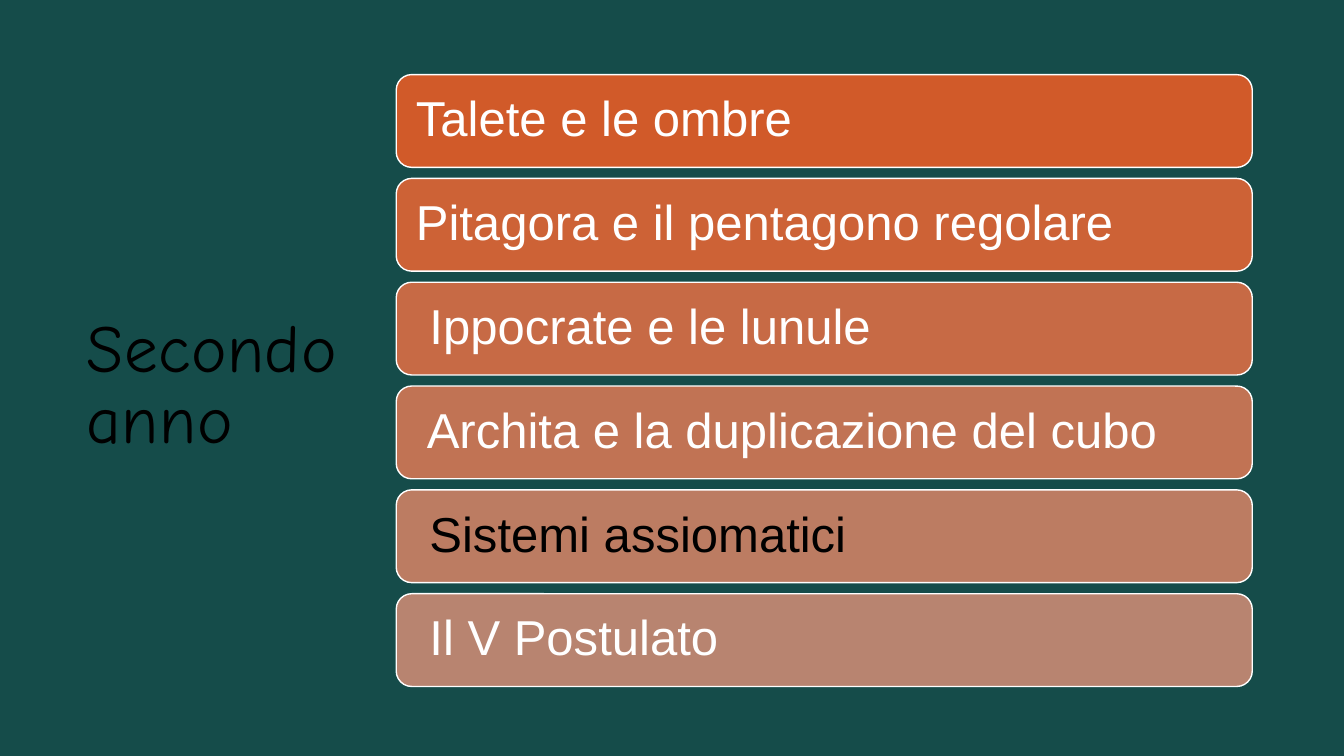
from pptx import Presentation
from pptx.dml.color import RGBColor
from pptx.enum.shapes import MSO_SHAPE
from pptx.enum.text import MSO_ANCHOR, PP_ALIGN
from pptx.util import Inches, Pt

WHITE, BLACK, GREEN = "FFFFFF", "000000", "154C4A"

# Label, bar fill, text colour
TOPICS = [
    ("Talete e le ombre", "D15A29", WHITE),
    ("Pitagora e il pentagono regolare", "CD6236", WHITE),
    (" Ippocrate e le lunule", "C76A45", WHITE),
    (" Archita e la duplicazione del cubo", "C17354", WHITE),
    (" Sistemi assiomatici", "BC7C62", BLACK),
    (" Il V Postulato", "B88470", WHITE),
]
TOP, STEP = 0.74, 1.03


def paint(fill, color):
    fill.solid()
    fill.fore_color.rgb = RGBColor.from_string(color)


def write(shape, text, font="Arial", size=35, color=WHITE, inset=0.15,
          leading=0.9, track=0):
    frame = shape.text_frame
    frame.word_wrap = True
    frame.vertical_anchor = MSO_ANCHOR.MIDDLE
    frame.margin_left = frame.margin_right = Inches(inset)
    frame.margin_top = frame.margin_bottom = Inches(inset)
    para = frame.paragraphs[0]
    para.alignment = PP_ALIGN.LEFT
    para.line_spacing = leading
    run = para.add_run()
    run.text = text
    run.font.name = font
    run.font.size = Pt(size)
    run.font.color.rgb = RGBColor.from_string(color)
    if track:
        # Letter spacing is stored in hundredths of a point
        run.font._element.set("spc", str(round(track * 100)))


def add_title(slide, text):
    box = slide.shapes.add_textbox(
        Inches(0.86), Inches(0.92), Inches(3.33), Inches(5.84))
    write(box, text, font="Comic Neue", size=48, color=BLACK, inset=0,
          leading=0.88, track=0.4)


def add_bar(slide, top, text, fill, color):
    bar = slide.shapes.add_shape(
        MSO_SHAPE.ROUNDED_RECTANGLE,
        Inches(3.93), Inches(top), Inches(8.49), Inches(0.92))
    bar.shadow.inherit = False
    paint(bar.fill, fill)
    paint(bar.line.fill, WHITE)
    bar.line.width = Pt(1)
    write(bar, text, color=color)


def main():
    deck = Presentation()
    deck.slide_width, deck.slide_height = Inches(13.33), Inches(7.5)
    slide = deck.slides.add_slide(deck.slide_layouts[6])
    paint(slide.background.fill, GREEN)

    # Title on the left, stacked topics on the right
    add_title(slide, "Secondo anno")
    for row, (text, fill, color) in enumerate(TOPICS):
        add_bar(slide, TOP + row * STEP, text, fill, color)

    deck.save("out.pptx")


if __name__ == "__main__":
    main()
